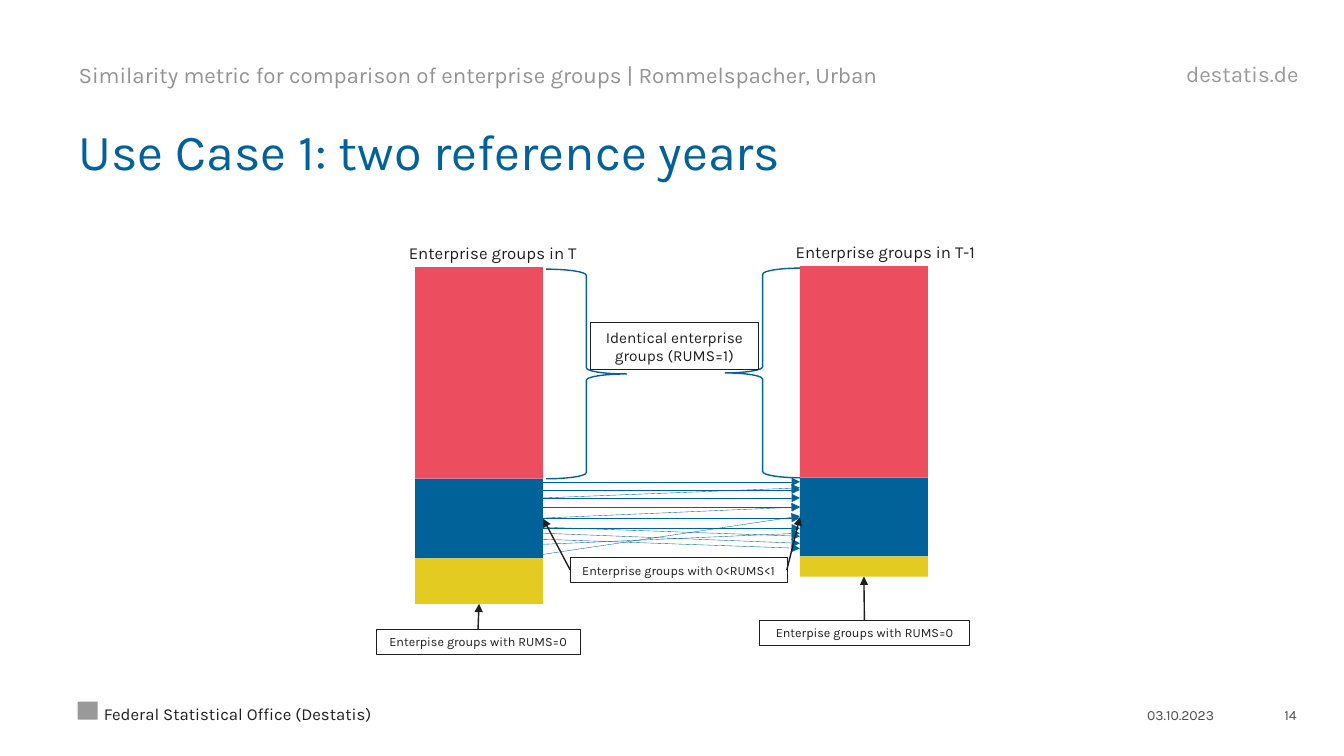
from lxml import etree
from pptx import Presentation
from pptx.dml.color import RGBColor
from pptx.enum.shapes import MSO_CONNECTOR, MSO_SHAPE
from pptx.enum.text import MSO_ANCHOR, PP_ALIGN
from pptx.oxml.ns import qn
from pptx.util import Inches, Pt

RECTANGLE = MSO_SHAPE.RECTANGLE
LEFT_BRACE, RIGHT_BRACE = MSO_SHAPE.LEFT_BRACE, MSO_SHAPE.RIGHT_BRACE
STRAIGHT = MSO_CONNECTOR.STRAIGHT
LEFT, CENTER, RIGHT = PP_ALIGN.LEFT, PP_ALIGN.CENTER, PP_ALIGN.RIGHT
TOP, MIDDLE, BOTTOM = MSO_ANCHOR.TOP, MSO_ANCHOR.MIDDLE, MSO_ANCHOR.BOTTOM
SIDE_TOP, SIDE_LEFT, SIDE_BOTTOM, SIDE_RIGHT = range(4)
FONT = "Karla"
COLORS = {
    "blue": "006298",
    "red": "EC4E60",
    "yellow": "E4CB22",
    "ink": "1E1E1E",
    "header": "939393",
    "site": "999999",
    "footer": "4B4B4B",
}
STRAIGHT_MATCHES = [4.78, 4.86, 4.94, 5.03, 5.14, 5.24]
SLANTED_MATCHES = [(5.14, 5.03), (4.94, 4.84), (5.4, 5.29), (5.23, 5.32),
                   (5.29, 5.39), (5.35, 5.44), (5.5, 5.12)]


def color(name):
    return RGBColor.from_string(COLORS[name])


def inches(box):
    return [Inches(length) for length in box]


def write(shape, text, size, color_name, align=LEFT, anchor=MIDDLE,
          insets=(0, 0, 0, 0), wrap=True):
    frame = shape.text_frame
    frame.word_wrap = wrap
    frame.vertical_anchor = anchor
    (frame.margin_left, frame.margin_top,
     frame.margin_right, frame.margin_bottom) = inches(insets)
    frame.text = text
    paragraph = frame.paragraphs[0]
    paragraph.alignment = align
    paragraph.font.name = FONT
    paragraph.font.size = Pt(size)
    paragraph.font.color.rgb = color(color_name)
    return paragraph


def add_text(slide, box, *text, **style):
    return write(slide.shapes.add_textbox(*inches(box)), *text, **style)


def add_preset(slide, preset, box, fill=None, line=None, width=1):
    shape = slide.shapes.add_shape(preset, *inches(box))
    shape.shadow.inherit = False
    if fill:
        shape.fill.solid()
        shape.fill.fore_color.rgb = color(fill)
    else:
        shape.fill.background()
    if line:
        shape.line.color.rgb = color(line)
        shape.line.width = Pt(width)
    else:
        shape.line.fill.background()
    return shape


def add_arrow(slide, start, end, color_name, width):
    arrow = slide.shapes.add_connector(STRAIGHT, *inches(start + end))
    arrow.line.color.rgb = color(color_name)
    arrow.line.width = Pt(width)
    etree.SubElement(arrow.line._get_or_add_ln(), qn("a:tailEnd"), type="triangle")
    etree.SubElement(arrow._element.spPr, qn("a:effectLst"))
    return arrow


def join(slide, label, label_side, segment, segment_side):
    arrow = add_arrow(slide, (0, 0), (1, 1), "ink", 1)
    arrow.begin_connect(label, label_side)
    arrow.end_connect(segment, segment_side)


def add_label(slide, box, text, size=9, width=0.25):
    label = add_preset(slide, RECTANGLE, box, line="ink", width=width)
    write(label, text, size, "ink", align=CENTER, insets=(0.1, 0.05, 0.1, 0.05))
    return label


def add_header(slide, box):
    left, top, width, height = box
    add_text(slide, (left, top, 9.81, height),
             "Similarity metric for comparison of enterprise groups | Rommelspacher, Urban",
             16, "header")
    add_text(slide, (left + width - 1.7, top, 1.7, height - 0.02),
             "destatis.de", 16, "site", align=RIGHT)


def add_title(slide, box):
    title = slide.shapes.title
    title.left, title.top, title.width, title.height = inches(box)
    paragraph = write(title, "Use Case 1: two reference years", 36, "blue",
                      insets=(0, 0.08, 0, 0.08))
    paragraph.line_spacing = 0.8


def add_footer(slide, box):
    left, top, width, height = box
    right = left + width
    add_preset(slide, RECTANGLE, (left, top + 0.07, 0.2, 0.18), fill="site")
    add_text(slide, (left + 0.26, top, 9.29, height),
             "Federal Statistical Office (Destatis)", 12, "ink", anchor=BOTTOM)
    for offset, field_width, text in [(2.46, 1.64, "03.10.2023"), (0.75, 0.75, "14")]:
        add_text(slide, (right - offset, top, field_width, height),
                 text, 10, "footer", align=RIGHT, anchor=BOTTOM)


def add_stack(slide, box, heights, heading, heading_offset):
    left, top, width, height = box
    add_text(slide, (left + heading_offset, top - 0.29, 2.04, 0.3), heading, 12, "ink",
             anchor=TOP, insets=(0.1, 0.05, 0.1, 0.05), wrap=False)
    segments = []
    for name, share in zip(("red", "blue", "yellow"), heights):
        segments.append(add_preset(slide, RECTANGLE, (left, top, width, share), fill=name))
        top += share
    return segments


def add_comparison(slide, box):
    left, top, width, height = box
    bar_width = 1.27
    start, end = left + bar_width, left + width - bar_width
    current = add_stack(slide, (left, top + 0.01, bar_width, height),
                        (2.1, 0.79, 0.45), "Enterprise groups in T", -0.16)
    previous = add_stack(slide, (end, top, bar_width, height),
                         (2.1, 0.78, 0.2), "Enterprise groups in T-1", -0.14)

    for preset, brace_box, curl in [
        (LEFT_BRACE, (end - 0.74, top + 0.02, 0.74, 2.08), 0.083),
        (RIGHT_BRACE, (start + 0.03, top + 0.03, 0.8, 2.08), 0.077),
    ]:
        brace = add_preset(slide, preset, brace_box, line="blue")
        brace.adjustments[0] = curl

    add_label(slide, (start + 0.47, top + 0.56, 1.67, 0.47),
              "Identical enterprise groups (RUMS=1)", 11, 0.75)

    matches = [(level, level) for level in STRAIGHT_MATCHES] + SLANTED_MATCHES
    for from_level, to_level in matches:
        add_arrow(slide, (start, from_level), (end, to_level), "blue", 0.25)

    partial = add_label(slide, (start + 0.27, top + 2.89, 2.15, 0.25),
                        "Enterprise groups with 0<RUMS<1")
    join(slide, partial, SIDE_LEFT, current[1], SIDE_RIGHT)
    join(slide, partial, SIDE_RIGHT, previous[1], SIDE_LEFT)

    for segments, label_box in [
        (current, (left - 0.39, top + 3.6, 2.03, 0.25)),
        (previous, (end - 0.4, top + 3.51, 2.08, 0.25)),
    ]:
        unmatched = add_label(slide, label_box, "Enterpise groups with RUMS=0")
        join(slide, unmatched, SIDE_TOP, segments[2], SIDE_BOTTOM)


def main():
    presentation = Presentation()
    presentation.slide_width = Inches(13.34)
    presentation.slide_height = Inches(7.5)
    slide = presentation.slides.add_slide(presentation.slide_layouts[5])
    add_header(slide, (0.78, 0.6, 12.11, 0.27))
    add_title(slide, (0.78, 1.22, 12.11, 0.66))
    add_comparison(slide, (4.12, 2.64, 5.09, 3.35))
    add_footer(slide, (0.77, 6.89, 12.1, 0.29))
    presentation.save("out.pptx")


if __name__ == "__main__":
    main()
